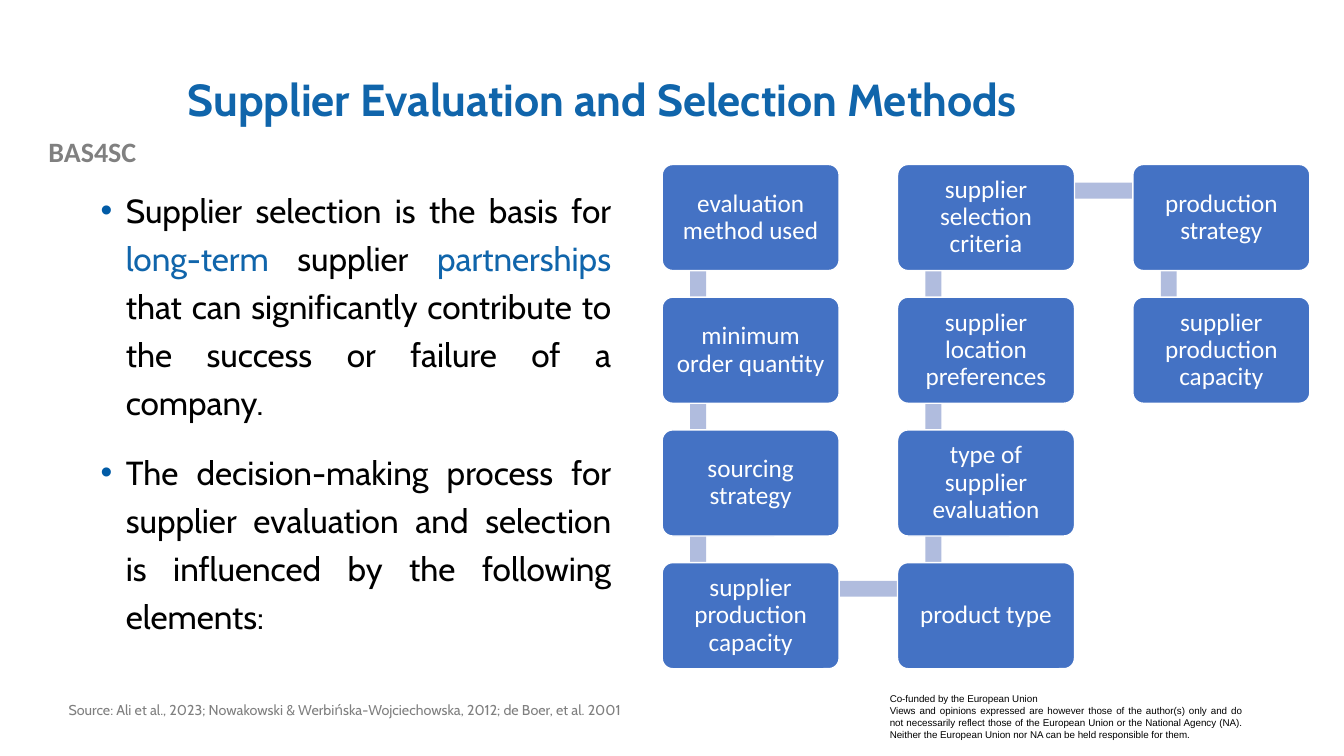
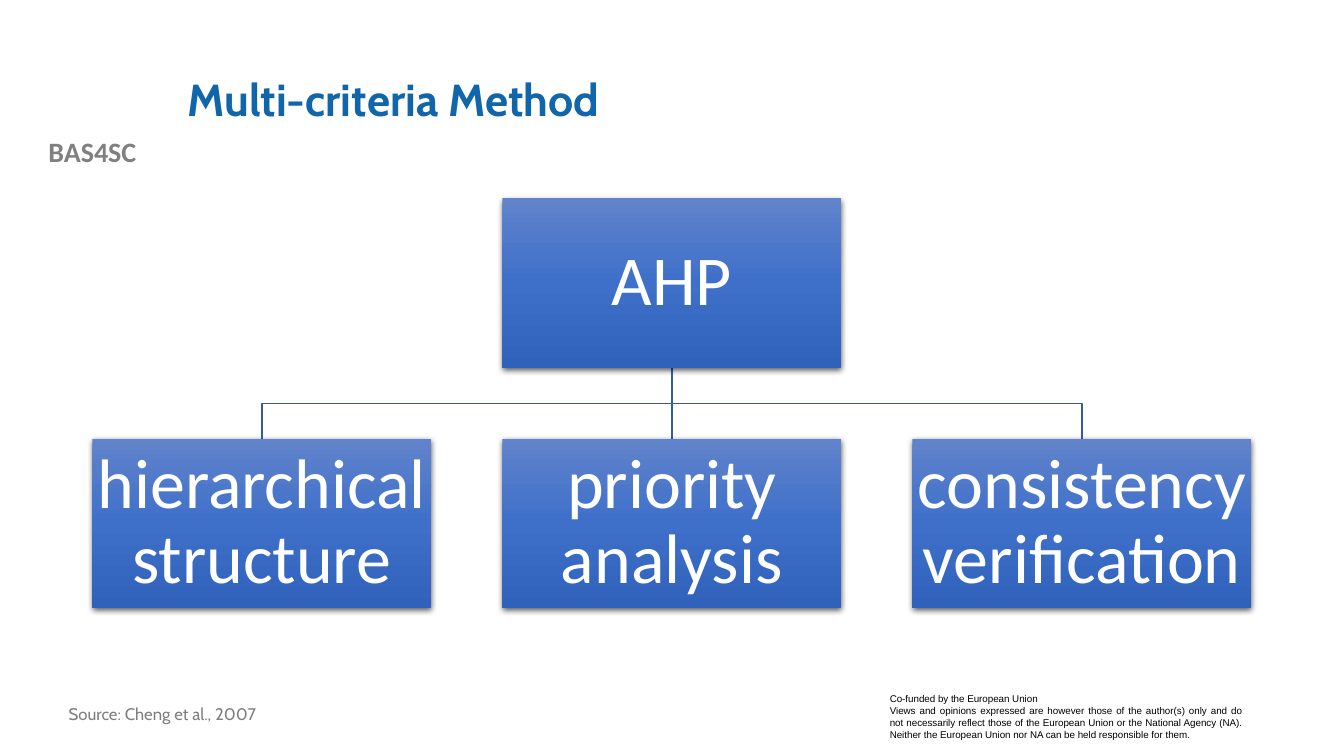
from itertools import pairwise

from lxml.etree import SubElement
from pptx import Presentation
from pptx.dml.color import RGBColor
from pptx.enum.shapes import MSO_CONNECTOR, MSO_SHAPE
from pptx.enum.text import MSO_ANCHOR, PP_ALIGN
from pptx.oxml.ns import qn
from pptx.util import Pt

# Shared style
WHITE = RGBColor(0xFF, 0xFF, 0xFF)
BLACK = RGBColor(0x00, 0x00, 0x00)
TITLE_BLUE = RGBColor(0x10, 0x65, 0xAB)
BULLET_BLUE = RGBColor(0x01, 0x5B, 0xA6)
BOX_BLUE = RGBColor(0x44, 0x72, 0xC4)
BAR_BLUE = RGBColor(0xB0, 0xBC, 0xDE)
LINE_BLUE = RGBColor(0x36, 0x5B, 0x9D)
LABEL_GRAY = RGBColor(0x80, 0x80, 0x80)
SOURCE_GRAY = RGBColor(0x7F, 0x7F, 0x7F)
GRADIENT = (
    (0, RGBColor(0x61, 0x83, 0xCB)),
    (50, RGBColor(0x3E, 0x70, 0xCA)),
    (100, RGBColor(0x30, 0x62, 0xBB)),
)
HEADING_FONT = "Cabin"
BOX_FONT = "Calibri"
SMALL_FONT = "Arial"
TITLE_ONLY = 5

PROJECT = "BAS4SC"
DISCLAIMER = (
    "Co-funded by the European Union",
    "Views and opinions expressed are however those of the author(s) only and do not "
    "necessarily reflect those of the European Union or the National Agency (NA). "
    "Neither the European Union nor NA can be held responsible for them.",
)

# Slide content: each run is a text and its colour
SELECTION_POINTS = (
    (
        ("Supplier selection is the basis for ", BLACK),
        ("long-term", TITLE_BLUE),
        (" supplier ", BLACK),
        ("partnerships", TITLE_BLUE),
        (" that can significantly contribute to the success or failure of a company.", BLACK),
    ),
    (
        ("The decision-making process for supplier evaluation and selection "
         "is influenced by the following elements:", BLACK),
    ),
)
ELEMENTS = (
    "evaluation method used",
    "minimum order quantity",
    "sourcing strategy",
    "supplier production capacity",
    "product type",
    "type of supplier evaluation",
    "supplier location preferences",
    "supplier selection criteria",
    "production strategy",
    "supplier production capacity",
)
AHP_PARTS = ("hierarchical structure", "priority analysis", "consistency verification")


def add_runs(paragraph, runs, font_name, size, bold=False):
    for text, color in runs:
        run = paragraph.add_run()
        run.text = text
        run.font.name = font_name
        run.font.size = Pt(size)
        run.font.bold = bold
        run.font.color.rgb = color


def add_text_box(slide, left, top, width, height):
    box = slide.shapes.add_textbox(Pt(left), Pt(top), Pt(width), Pt(height))
    box.text_frame.word_wrap = True
    return box


def add_box(slide, preset, left, top, width, height, color):
    shape = slide.shapes.add_shape(preset, Pt(left), Pt(top), Pt(width), Pt(height))
    shape.shadow.inherit = False
    shape.fill.solid()
    shape.fill.fore_color.rgb = color
    shape.line.fill.background()
    return shape


def label_box(shape, text, size, margin):
    frame = shape.text_frame
    frame.word_wrap = True
    frame.vertical_anchor = MSO_ANCHOR.MIDDLE
    frame.margin_left = frame.margin_right = Pt(margin)
    frame.margin_top = frame.margin_bottom = Pt(margin)
    paragraph = frame.paragraphs[0]
    paragraph.alignment = PP_ALIGN.CENTER
    paragraph.line_spacing = 0.9
    add_runs(paragraph, [(text, WHITE)], BOX_FONT, size)


def add_branch(slide, x1, y1, x2, y2):
    """Join two points: straight if one is below the other, else with two bends."""
    if x1 == x2:
        branch = slide.shapes.add_connector(
            MSO_CONNECTOR.STRAIGHT, Pt(x1), Pt(y1), Pt(x2), Pt(y2))
        SubElement(branch.element.spPr, qn("a:effectLst"))
    else:
        middle = (y1 + y2) / 2
        builder = slide.shapes.build_freeform(Pt(x1), Pt(y1))
        bends = [(x1, middle), (x2, middle), (x2, y2)]
        builder.add_line_segments([(Pt(x), Pt(y)) for x, y in bends], close=False)
        branch = builder.convert_to_shape()
        branch.shadow.inherit = False
        branch.fill.background()
    branch.line.color.rgb = LINE_BLUE
    branch.line.width = Pt(1)


def add_bullet(paragraph):
    properties = paragraph._p.get_or_add_pPr()
    properties.set("marL", str(Pt(18)))
    properties.set("indent", str(-Pt(18)))
    bullet_color = SubElement(properties, qn("a:buClr"))
    SubElement(bullet_color, qn("a:srgbClr"), val=str(BULLET_BLUE))
    SubElement(properties, qn("a:buFont"), typeface=SMALL_FONT)
    SubElement(properties, qn("a:buChar"), char="•")


def add_gradient_and_shadow(shape):
    shape.fill.gradient()
    shape.fill.gradient_angle = 270
    stops = shape.element.spPr.find(".//" + qn("a:gsLst"))
    for old_stop in list(stops):
        stops.remove(old_stop)
    for position, color in GRADIENT:
        stop = SubElement(stops, qn("a:gs"), pos=str(position * 1000))
        SubElement(stop, qn("a:srgbClr"), val=str(color))
    effects = shape.element.spPr.find(qn("a:effectLst"))
    shadow = SubElement(effects, qn("a:outerShdw"), blurRad=str(Pt(4.5)), dist=str(Pt(1.5)),
                        dir="5400000", algn="ctr", rotWithShape="0")
    shadow_color = SubElement(shadow, qn("a:srgbClr"), val=str(BLACK))
    SubElement(shadow_color, qn("a:alpha"), val="63000")


def add_title_slide(presentation, title):
    slide = presentation.slides.add_slide(presentation.slide_layouts[TITLE_ONLY])
    shape = slide.shapes.title
    shape.left, shape.top, shape.width, shape.height = Pt(126.8), Pt(28.8), Pt(767.5), Pt(87.8)
    shape.text_frame.vertical_anchor = MSO_ANCHOR.MIDDLE
    paragraph = shape.text_frame.paragraphs[0]
    paragraph.alignment = PP_ALIGN.LEFT
    paragraph.line_spacing = 0.9
    add_runs(paragraph, [(title, TITLE_BLUE)], HEADING_FONT, 32, bold=True)
    return slide


def move_to_layout(slide, shape):
    slide.slide_layout.shapes.element.append(shape.element)


def brand_layout(slide):
    """Put the project label and the disclaimer on the layout of the slide."""
    label = add_text_box(slide, 0, 92.2, 132, 31.7)
    paragraph = label.text_frame.paragraphs[0]
    paragraph.alignment = PP_ALIGN.CENTER
    add_runs(paragraph, [(PROJECT, LABEL_GRAY)], BOX_FONT, 20, bold=True)
    move_to_layout(slide, label)

    disclaimer = add_text_box(slide, 628.5, 491.5, 265.7, 41)
    disclaimer.fill.solid()
    disclaimer.fill.fore_color.rgb = WHITE
    frame = disclaimer.text_frame
    for index, text in enumerate(DISCLAIMER):
        paragraph = frame.add_paragraph() if index else frame.paragraphs[0]
        paragraph.alignment = PP_ALIGN.JUSTIFY
        add_runs(paragraph, [(text, BLACK)], SMALL_FONT, 7)
    move_to_layout(slide, disclaimer)


def add_source(slide, text, size, line_spacing):
    box = add_text_box(slide, 41.9, 500.6, 424.8, 25.2)
    paragraph = box.text_frame.paragraphs[0]
    paragraph.line_spacing = line_spacing
    add_runs(paragraph, [(text, SOURCE_GRAY)], HEADING_FONT, size)


def add_points(slide, points):
    frame = add_text_box(slide, 64.8, 126.6, 378.7, 342.7).text_frame
    for index, runs in enumerate(points):
        paragraph = frame.add_paragraph() if index else frame.paragraphs[0]
        add_bullet(paragraph)
        paragraph.alignment = PP_ALIGN.JUSTIFY
        paragraph.line_spacing = 1.2
        if index:
            paragraph.space_before = Pt(16)
        add_runs(paragraph, runs, HEADING_FONT, 23.8)


def add_winding_chain(slide, labels):
    """Boxes run down one column and up the next, joined by bars."""
    rows, column_pitch, row_pitch = 4, 168.1, 94.8
    bar = 11.4
    corners = []
    for index in range(len(labels)):
        column, step = divmod(index, rows)
        row = rows - 1 - step if column % 2 else step
        corners.append((473 + column * column_pitch, 117.5 + row * row_pitch))

    # Bars lie behind the boxes
    for (x1, y1), (x2, y2) in pairwise(corners):
        add_box(slide, MSO_SHAPE.RECTANGLE, min(x1, x2) + 20, min(y1, y2) + 13,
                abs(x2 - x1) + bar, abs(y2 - y1) + bar, BAR_BLUE)
    for (left, top), text in zip(corners, labels):
        box = add_box(slide, MSO_SHAPE.ROUNDED_RECTANGLE, left, top, 126.4, 75.8, BOX_BLUE)
        box.adjustments[0] = 0.1
        box.line.color.rgb = WHITE
        box.line.width = Pt(1)
        label_box(box, text, 18, 5.25)


def add_hierarchy(slide, root, children):
    width, height, pitch = 242.2, 121.1, 292.9
    center, root_top, child_top = 480, 141.8, 313.4
    child_centers = [center + (index - (len(children) - 1) / 2) * pitch
                     for index in range(len(children))]

    # Branches lie behind the boxes
    for x in child_centers:
        add_branch(slide, center, root_top + height, x, child_top)

    nodes = [(center, root_top, root)]
    nodes += [(x, child_top, text) for x, text in zip(child_centers, children)]
    for x, top, text in nodes:
        box = add_box(slide, MSO_SHAPE.RECTANGLE, x - width / 2, top, width, height, BOX_BLUE)
        add_gradient_and_shadow(box)
        label_box(box, text, 50, 2.25)


def main():
    presentation = Presentation()
    presentation.slide_width, presentation.slide_height = Pt(960), Pt(540)

    # Selection methods
    slide = add_title_slide(presentation, "Supplier Evaluation and Selection Methods")
    brand_layout(slide)
    add_points(slide, SELECTION_POINTS)
    add_source(slide, "Source: Ali et al., 2023; Nowakowski & Werbińska-Wojciechowska, 2012; "
                      "de Boer, et al. 2001", 10.2, 0.7)
    add_winding_chain(slide, ELEMENTS)

    # Multi-criteria method
    slide = add_title_slide(presentation, "Multi-criteria Method")
    add_source(slide, "Source: Cheng et al., 2007", 12, 0.9)
    add_hierarchy(slide, "AHP", AHP_PARTS)

    presentation.save("out.pptx")


if __name__ == "__main__":
    main()
